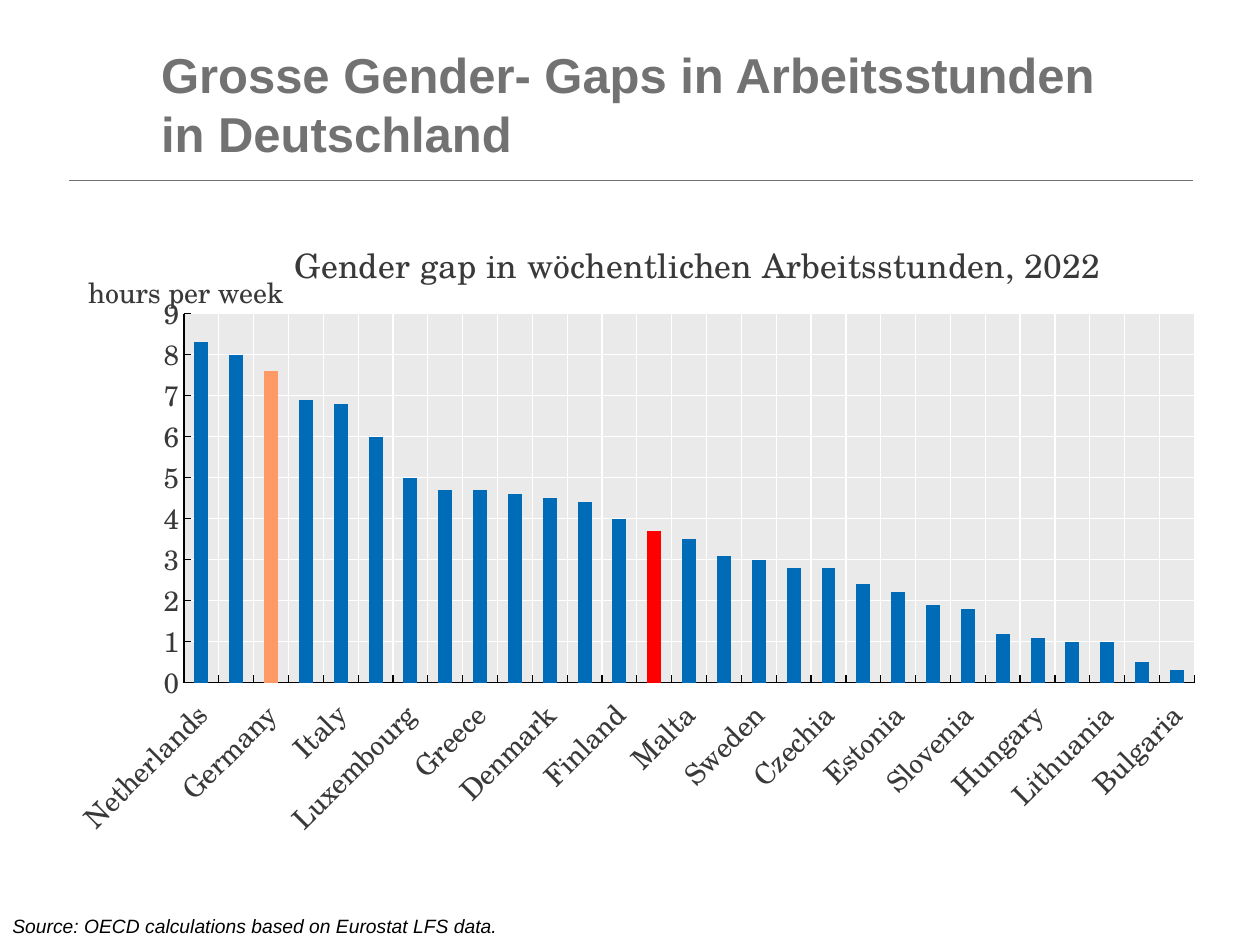
from lxml import etree
from pptx import Presentation
from pptx.chart.data import CategoryChartData
from pptx.dml.color import RGBColor
from pptx.enum import chart as charts, shapes, text
from pptx.oxml import parse_xml
from pptx.oxml.ns import nsdecls, qn
from pptx.util import Inches, Pt

TITLE_LINES = ["Grosse Gender- Gaps in Arbeitsstunden", "in Deutschland"]
SOURCE = "Source: OECD calculations based on Eurostat LFS data."
CHART_TITLE = "Gender gap in wöchentlichen Arbeitsstunden, 2022"
AXIS_TITLE = "hours per week"
GAPS = [
    ("Netherlands", 8.3), ("Austria", 8), ("Germany", 7.6), ("Ireland", 6.9),
    ("Italy", 6.8), ("Belgium", 6), ("Luxembourg", 5), ("Norway", 4.7),
    ("Greece", 4.7), ("Spain", 4.6), ("Denmark", 4.5), ("France", 4.4),
    ("Finland", 4), ("EU27", 3.7), ("Malta", 3.5), ("Cyprus", 3.1),
    ("Sweden", 3), ("Portugal", 2.8), ("Czechia", 2.8), ("Poland", 2.4),
    ("Estonia", 2.2), ("Slovakia", 1.9), ("Slovenia", 1.8), ("Croatia", 1.2),
    ("Hungary", 1.1), ("Latvia", 1), ("Lithuania", 1), ("Romania", 0.5),
    ("Bulgaria", 0.3),
]
HIGHLIGHTS = {"Germany": "FF9966", "EU27": "FF0000"}
GREY, INK, BLACK, WHITE = "727272", "393939", "000000", "FFFFFF"
BAR, PLOT = "006BB6", "EAEAEA"
SANS, SERIF = "Arial", "TeX Gyre Schola"
CHART_LEFT, CHART_TOP, CHART_WIDTH, CHART_HEIGHT = 0.51, 1.75, 8.99, 4.95


def color(value):
    return RGBColor.from_string(value)


def style_font(font, name, size, value, bold=False, italic=False):
    font.name, font.size = name, Pt(size)
    font.bold, font.italic = bold, italic
    font.color.rgb = color(value)


def style_line(line, value, width):
    line.color.rgb = color(value)
    line.width = Pt(width)


def fill_solid(fill, value):
    fill.solid()
    fill.fore_color.rgb = color(value)


def add_text(slide, place, lines, anchor, **font):
    box = slide.shapes.add_textbox(*map(Inches, place))
    frame = box.text_frame
    frame.word_wrap = True
    frame.vertical_anchor = anchor
    para = frame.paragraphs[0]
    for number, line in enumerate(lines):
        if number:
            para.add_line_break()
        span = para.add_run()
        span.text = line
        style_font(span.font, **font)


def set_layout(element, inner=False, **inches):
    """Place a chart part, in inches from the chart's top left corner."""
    layout = element.find(qn("c:layout"))
    if layout is None:
        layout = parse_xml(f"<c:layout {nsdecls('c')}/>")
        before = element.find(qn("c:tx"))
        if before is None:
            element.insert(0, layout)
        else:
            before.addnext(layout)
    for child in list(layout):
        layout.remove(child)
    manual = etree.SubElement(layout, qn("c:manualLayout"))
    settings = [("layoutTarget", "inner")] if inner else []
    settings += [("xMode", "edge"), ("yMode", "edge")]
    for tag, length in inches.items():
        whole = CHART_WIDTH if tag in "xw" else CHART_HEIGHT
        settings.append((tag, length / whole))
    for tag, value in settings:
        etree.SubElement(manual, qn(f"c:{tag}")).set("val", str(value))


def add_chart_title(title, words, size, x, y):
    frame = title.text_frame
    span = frame.paragraphs[0].add_run()
    span.text = words
    style_font(span.font, SERIF, size, INK)
    body = frame._txBody.find(qn("a:bodyPr"))
    body.set("rot", "0")
    body.set("vert", "horz")
    set_layout(title._element, x=x, y=y)


def style_axis(axis):
    style_font(axis.tick_labels.font, SERIF, 16, INK)
    axis.major_tick_mark = charts.XL_TICK_MARK.INSIDE
    axis.minor_tick_mark = charts.XL_TICK_MARK.NONE
    style_line(axis.format.line, BLACK, 0.75)
    axis.has_major_gridlines = True
    style_line(axis.major_gridlines.format.line, WHITE, 0.75)


def add_gap_chart(slide):
    data = CategoryChartData()
    data.categories = [country for country, _ in GAPS]
    data.add_series("Series 1", [hours for _, hours in GAPS])
    place = CHART_LEFT, CHART_TOP, CHART_WIDTH, CHART_HEIGHT
    chart = slide.shapes.add_chart(
        charts.XL_CHART_TYPE.COLUMN_CLUSTERED, *map(Inches, place), data).chart
    style_font(chart.font, SERIF, 16, INK)
    chart.has_legend = False
    add_chart_title(chart.chart_title, CHART_TITLE, 19.2, 1.78, 0.07)
    chart.chart_title.include_in_layout = False

    countries, hours = chart.category_axis, chart.value_axis
    for axis in (countries, hours):
        style_axis(axis)
    countries.tick_label_position = charts.XL_TICK_LABEL_POSITION.LOW
    countries._element.find(qn("c:txPr")).find(qn("a:bodyPr")).set("rot", "-2700000")
    skip = parse_xml(f'<c:tickLblSkip {nsdecls("c")} val="2"/>')
    countries._element.find(qn("c:noMultiLvlLbl")).addprevious(skip)
    hours.minimum_scale, hours.maximum_scale, hours.major_unit = 0, 9, 1
    hours.tick_labels.number_format = "General"
    hours.tick_labels.number_format_is_linked = False
    add_chart_title(hours.axis_title, AXIS_TITLE, 16, 0.15, 0.34)

    plot = chart.plots[0]
    plot.gap_width, plot.overlap, plot.vary_by_categories = 150, -27, False
    series = plot.series[0]
    fill_solid(series.format.fill, BAR)
    for index, (country, _) in enumerate(GAPS):
        if country in HIGHLIGHTS:
            fill_solid(series.points[index].format.fill, HIGHLIGHTS[country])

    area = chart._chartSpace.chart.plotArea
    set_layout(area, inner=True, x=0.95, y=0.74, w=8.02, h=2.93)
    area.append(parse_xml(
        f'<c:spPr {nsdecls("c", "a")}><a:solidFill><a:srgbClr val="{PLOT}"/>'
        "</a:solidFill><a:ln><a:noFill/></a:ln></c:spPr>"))


def main():
    deck = Presentation()
    deck.slide_width, deck.slide_height = Inches(10), Inches(7.5)
    slide = deck.slides.add_slide(deck.slide_layouts[6])
    rule = slide.shapes.add_connector(
        shapes.MSO_CONNECTOR.STRAIGHT,
        *map(Inches, (0.55, 1.43, 9.47, 1.43)))
    style_line(rule.line, GREY, 0.5)
    etree.SubElement(rule._element.spPr, qn("a:effectLst"))
    add_text(slide, (1.18, 0.26, 8.11, 1.12), TITLE_LINES, text.MSO_ANCHOR.MIDDLE,
             name=SANS, size=28, value=GREY, bold=True)
    add_text(slide, (0, 7.21, 8.27, 0.29), [SOURCE], text.MSO_ANCHOR.TOP,
             name=SANS, size=11, value=BLACK, italic=True)
    add_gap_chart(slide)
    deck.save("out.pptx")


if __name__ == "__main__":
    main()
